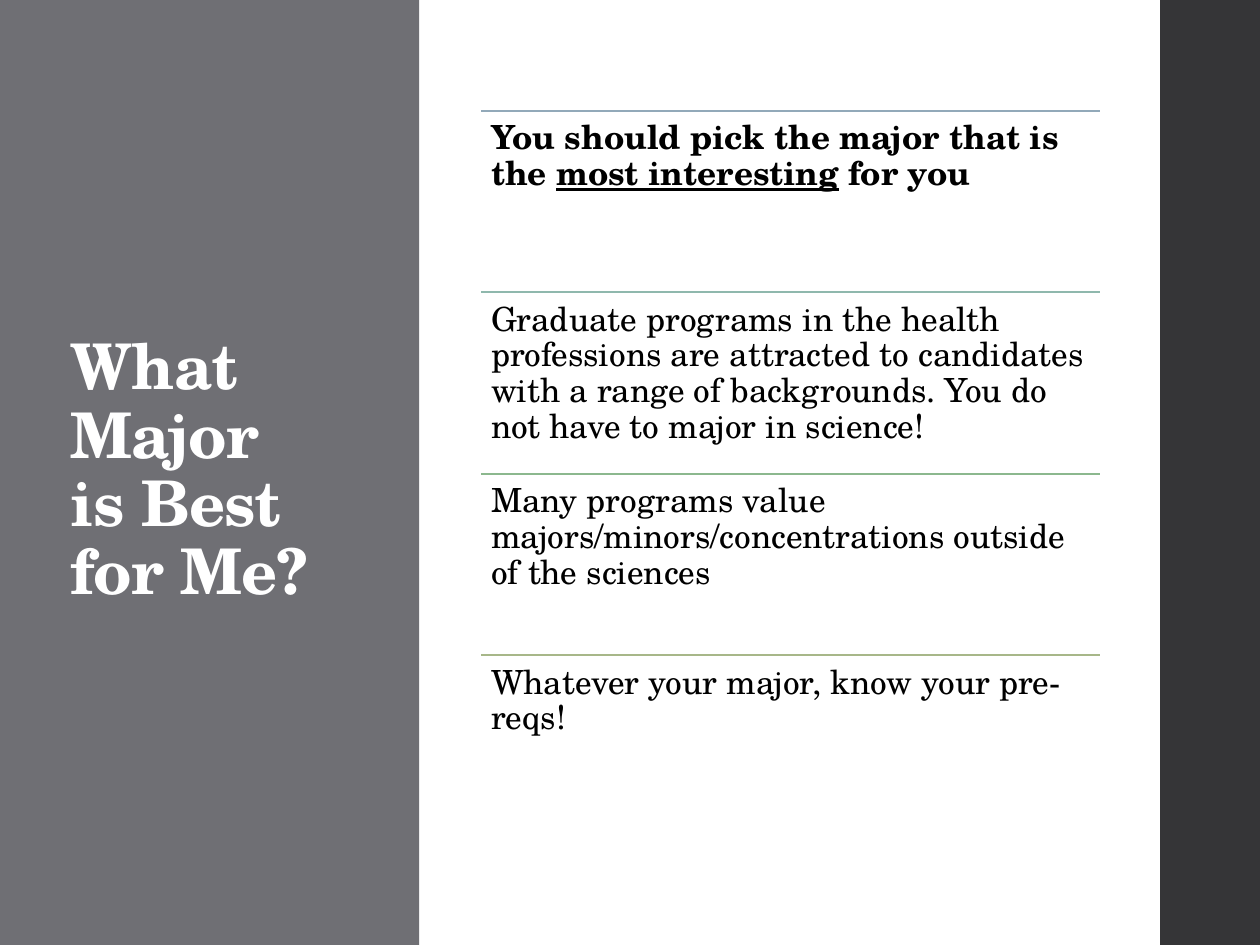
from lxml import etree
from pptx import Presentation
from pptx import util as u
from pptx.dml.color import RGBColor
from pptx.enum import shapes, text
from pptx.oxml.ns import qn

FACE = "TeX Gyre Schola"
LEFT, TOP, WIDTH, STEP = 275, 63.4, 353.5, 103.7

# Rule colour and text runs of each row; a run is (words, format)
ROWS = [
    ("92A9B9", [("You should pick the major that is the ", {"bold": True}),
                ("most interesting", {"bold": True, "underline": True}),
                (" for you", {"bold": True})]),
    ("8FB8AD", [("Graduate programs in the health professions are attracted "
                 "to candidates with a range of backgrounds. You do not have "
                 "to major in science!", {})]),
    ("8CB88E", [("Many programs value majors/minors/concentrations outside "
                 "of the sciences", {})]),
    ("A7B789", [("Whatever your major, know your pre-reqs!", {})]),
]


def paint(part, color):
    part.rgb = RGBColor.from_string(color)


def add_panel(slide, box, color):
    panel = slide.shapes.add_shape(
        shapes.MSO_SHAPE.RECTANGLE, *map(u.Pt, box))
    panel.shadow.inherit = False
    panel.fill.solid()
    paint(panel.fill.fore_color, color)
    panel.line.fill.background()


def add_rule(slide, top, color):
    rule = slide.shapes.add_connector(
        shapes.MSO_CONNECTOR.STRAIGHT,
        *map(u.Pt, (LEFT, top, LEFT + WIDTH, top)))
    rule.line.width = u.Pt(1.1)
    paint(rule.line.color, color)
    props = rule._element.spPr
    etree.SubElement(props, qn("a:effectLst"))


def add_text(slide, box, runs, size, color, inset, anchor, track=None):
    frame = slide.shapes.add_textbox(*map(u.Pt, box)).text_frame
    layout = {"word_wrap": True, "vertical_anchor": anchor,
              "margin_left": u.Pt(inset[0]), "margin_right": u.Pt(inset[0]),
              "margin_top": u.Pt(inset[1]), "margin_bottom": u.Pt(inset[1])}
    for key, value in layout.items():
        setattr(frame, key, value)
    para = frame.paragraphs[0]
    para.line_spacing = 0.9
    for words, style in runs:
        run = para.add_run()
        run.text = words
        for key, value in {"name": FACE, "size": u.Pt(size), **style}.items():
            setattr(run.font, key, value)
        paint(run.font.color, color)
        if track:
            run._r.get_or_add_rPr().set("spc", str(track))


def main():
    deck = Presentation()
    deck.slide_width, deck.slide_height = u.Pt(720), u.Pt(540)
    slide = deck.slides.add_slide(deck.slide_layouts[6])

    # Side panels
    add_panel(slide, (0, 0, 239.5, 540), "6F6F74")
    add_panel(slide, (663, 0, 57, 540), "353537")

    # Title
    add_text(slide, (33.5, 65.5, 160.5, 408),
             [("What Major is Best for Me?", {"bold": True})],
             36, "FFFFFF", (7.2, 3.6), text.MSO_ANCHOR.MIDDLE, track=-50)

    # Ruled rows of advice
    for i, (color, runs) in enumerate(ROWS):
        top = TOP + i * STEP
        add_rule(slide, top, color)
        add_text(slide, (LEFT, top, WIDTH, STEP), runs,
                 19, "000000", (5.7, 5.7), text.MSO_ANCHOR.TOP)

    deck.save("out.pptx")


if __name__ == "__main__":
    main()
